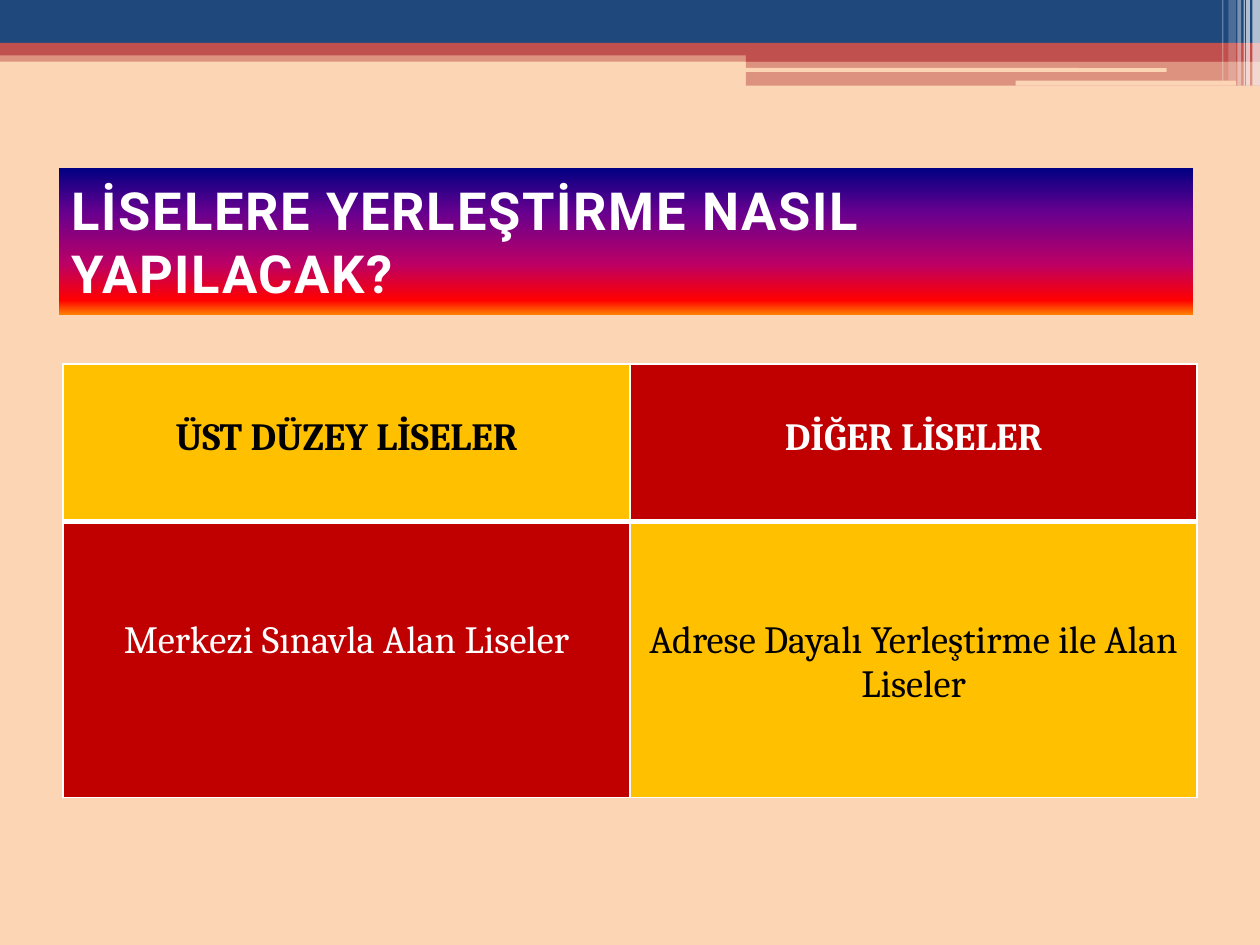
from dataclasses import dataclass

from lxml.etree import SubElement
from pptx import Presentation
from pptx.dml.color import RGBColor
from pptx.enum.shapes import MSO_SHAPE
from pptx.enum.text import MSO_ANCHOR, MSO_AUTO_SIZE, PP_ALIGN
from pptx.oxml import parse_xml
from pptx.oxml.ns import nsdecls, qn
from pptx.util import Inches, Length, Pt

COLORS = {
    "background": "FCD5B5", "navy": "1F497D", "brick": "C0504D",
    "white": "FFFFFF", "black": "000000", "amber": "FFC000", "red": "C00000",
}
TITLE_GRADIENT = [(0, "000082"), (30, "66008F"), (65, "BA0066"), (90, "FF0000"), (100, "FF8200")]
COLUMNS, ROWS = 100, 75
SLIDE_WIDTH, SLIDE_HEIGHT = Inches(10), Inches(7.5)
TEXT_LINE = 0.36


@dataclass
class Bar:
    left: float
    top: float
    width: float
    height: float
    color: str
    opacity: int = 100
    rounded: bool = False


@dataclass
class Entry:
    text: str
    fill: str
    color: str


BARS = [
    Bar(0, 4, 100, 0.9, "brick", 50),
    Bar(0, 0, 100, 3.4, "navy"),
    Bar(0, 3.4, 100, 1, "brick"),
    Bar(59.2, 3.9, 40.8, 1, "brick"),
    Bar(59.2, 4.8, 40.8, 2, "brick", 50),
    Bar(59.1, 5.4, 33.5, 0.3, "background", rounded=True),
    Bar(80.6, 6.4, 17.5, 0.4, "background", rounded=True),
] + [
    Bar(left, 0, width, height, "white", opacity)
    for left, width, height, opacity in [
        (99.4, 0.6, 6.8, 65), (98.9, 0.3, 6.8, 65), (98.7, 0.1, 6.8, 60),
        (98.2, 0.3, 6.8, 40), (97.5, 0.6, 6.4, 20), (97, 0.1, 6.4, 30),
    ]
]
ENTRIES = [
    [Entry("ÜST DÜZEY LİSELER", "amber", "black"), Entry("DİĞER LİSELER", "red", "white")],
    [Entry("Merkezi Sınavla Alan Liseler", "red", "white"),
     Entry("Adrese Dayalı Yerleştirme ile Alan Liseler", "amber", "black")],
]


def rgb(name: str) -> RGBColor:
    """Look up a named colour."""
    return RGBColor.from_string(COLORS[name])


def across(columns: float) -> Length:
    """Turn grid columns into a length."""
    return Length(round(SLIDE_WIDTH * columns / COLUMNS))


def down(rows: float) -> Length:
    """Turn grid rows into a length."""
    return Length(round(SLIDE_HEIGHT * rows / ROWS))


def draw_bar(slide, bar: Bar) -> None:
    """Draw one decorative bar of the header."""
    kind = MSO_SHAPE.ROUNDED_RECTANGLE if bar.rounded else MSO_SHAPE.RECTANGLE
    shape = slide.shapes.add_shape(
        kind, across(bar.left), down(bar.top), across(bar.width), down(bar.height))
    shape.shadow.inherit = False
    shape.line.fill.background()
    shape.fill.solid()
    shape.fill.fore_color.rgb = rgb(bar.color)
    if bar.opacity < 100:
        color = shape.fill._xPr.find(qn("a:solidFill"))[0]
        SubElement(color, qn("a:alpha"), val=str(bar.opacity * 1000))


def format_title(title) -> None:
    """Place the title and give it its text and gradient."""
    title.left, title.top = across(4.7), down(13.3)
    title.width, title.height = across(90), down(11.7)
    stops = "".join(
        f'<a:gs pos="{share * 1000}"><a:srgbClr val="{color}"/></a:gs>'
        for share, color in TITLE_GRADIENT)
    title._element.spPr.append(parse_xml(
        f'<a:gradFill {nsdecls("a")} rotWithShape="1"><a:gsLst>{stops}</a:gsLst>'
        '<a:lin ang="5400000" scaled="0"/></a:gradFill>'))
    frame = title.text_frame
    frame.text = "LİSELERE YERLEŞTİRME NASIL YAPILACAK?"
    frame.word_wrap = True
    frame.auto_size = MSO_AUTO_SIZE.NONE
    frame.vertical_anchor = MSO_ANCHOR.MIDDLE
    paragraph = frame.paragraphs[0]
    paragraph.alignment = PP_ALIGN.LEFT
    font = paragraph.font
    font.name, font.size, font.bold = "Roboto", Pt(30), True
    font.color.rgb = rgb("white")
    paragraph.runs[0].font._element.set("spc", "100")


def set_borders(cell, top: float, bottom: float) -> None:
    """Give a cell white borders, one point wide at the sides."""
    properties = cell._tc.get_or_add_tcPr()
    widths = {"lnL": 1, "lnR": 1, "lnT": top, "lnB": bottom}
    for index, (side, width) in enumerate(widths.items()):
        properties.insert(index, parse_xml(
            f'<a:{side} {nsdecls("a")} w="{Pt(width)}"><a:solidFill>'
            f'<a:srgbClr val="{COLORS["white"]}"/></a:solidFill></a:{side}>'))


def fill_cell(cell, entry: Entry, row: int) -> None:
    """Write and format one table cell."""
    cell.text = entry.text
    cell.margin_top = Inches(0.05 + TEXT_LINE * (row + 1))
    cell.fill.solid()
    cell.fill.fore_color.rgb = rgb(entry.fill)
    paragraph = cell.text_frame.paragraphs[0]
    paragraph.alignment = PP_ALIGN.CENTER
    font = paragraph.font
    font.name, font.size, font.bold = "Cambria", Pt(22), row == 0
    font.color.rgb = rgb(entry.color)
    set_borders(cell, *((1, 3) if row == 0 else (3, 1)))


def draw_table(slide) -> None:
    """Draw the table that compares the two kinds of school."""
    table = slide.shapes.add_table(
        2, 2, across(5), down(28.9), across(90), down(34.4)).table
    table.horz_banding = False
    for row, height in enumerate((12.5, 21.9)):
        table.rows[row].height = down(height)
        for column, entry in enumerate(ENTRIES[row]):
            fill_cell(table.cell(row, column), entry, row)


def main() -> None:
    """Build the slide and save it."""
    presentation = Presentation()
    presentation.slide_width, presentation.slide_height = SLIDE_WIDTH, SLIDE_HEIGHT
    slide = presentation.slides.add_slide(presentation.slide_layouts[5])
    slide.background.fill.solid()
    slide.background.fill.fore_color.rgb = rgb("background")
    for bar in BARS:
        draw_bar(slide, bar)
    format_title(slide.shapes.title)
    draw_table(slide)
    presentation.save("out.pptx")


if __name__ == "__main__":
    main()
